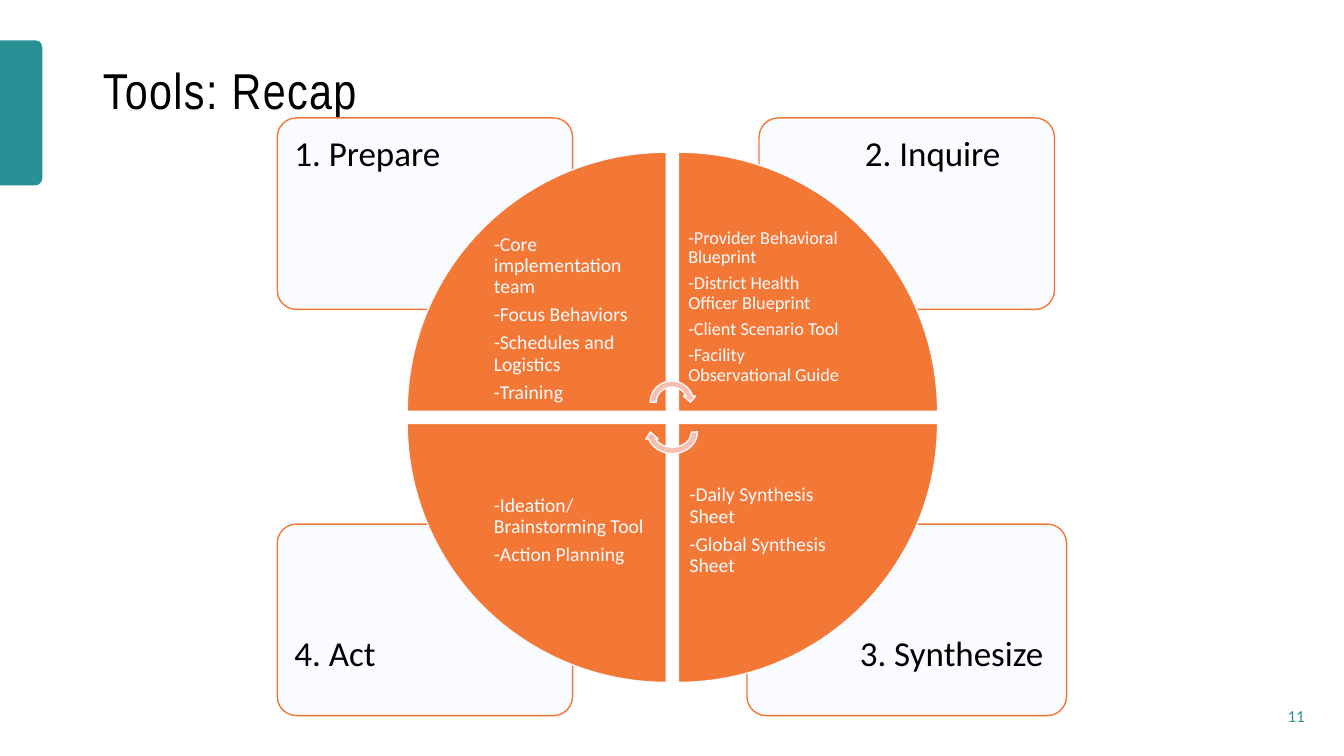
from dataclasses import dataclass
from typing import Any

from lxml import etree
from pptx import Presentation
from pptx import util as u
from pptx.dml.color import RGBColor
from pptx.enum import shapes, text
from pptx.oxml.ns import qn

WIDTH, HEIGHT = u.Inches(13.33), u.Inches(7.5)
COLORS = {"teal": "289195", "orange": "F37836", "pale": "FAFBFF",
          "pink": "F8BEAE", "black": "000000"}
KIND = shapes.MSO_SHAPE
ANCHOR = text.MSO_ANCHOR


@dataclass(frozen=True)
class Box:
    """Left, top, width and height in percent of the slide's size."""
    left: float
    top: float
    width: float
    height: float

    def frame(self) -> dict[str, int]:
        return {"left": round(WIDTH * self.left / 100),
                "top": round(HEIGHT * self.top / 100),
                "width": round(WIDTH * self.width / 100),
                "height": round(HEIGHT * self.height / 100)}


@dataclass(frozen=True)
class Step:
    heading: str
    card: Box
    label: Box
    column: int
    row: int
    rotation: int
    tools: list[str]
    tools_top: float
    size: int = 14


@dataclass(frozen=True)
class Arrow:
    box: Box
    rotation: int


STEPS = [
    Step("3. Synthesize", Box(55.58, 69.33, 23.78, 25.33), Box(63, 82.4, 16.05, 11.73),
         1, 1, 180, ["-Daily Synthesis Sheet", "-Global Synthesis Sheet"], 58.13),
    Step("4. Act", Box(20.63, 69.33, 21.98, 25.33), Box(20.93, 82.4, 14.78, 11.73),
         0, 1, 270, ["-Ideation/ Brainstorming Tool", "-Action Planning"], 58.13),
    Step("2. Inquire", Box(56.48, 15.6, 21.98, 25.33), Box(63.38, 16.27, 14.78, 11.73),
         1, 0, 90, ["-Provider Behavioral Blueprint", "-District Health Officer Blueprint",
                    "-Client Scenario Tool", "-Facility\vObservational Guide"], 28.53, 13),
    Step("1. Prepare", Box(20.63, 15.6, 21.98, 25.33), Box(20.93, 16.27, 14.78, 11.73),
         0, 0, 0, ["-Core implementation team", "-Focus Behaviors",
                   "-Schedules and Logistics", "-Training"], 30.13),
]
ARROWS = [Arrow(Box(48.15, 50, 3.68, 6.4), 0), Arrow(Box(47.93, 53.87, 4.2, 6.53), 180)]


def set_all(target: Any, values: dict[str, Any]) -> None:
    for name, value in values.items():
        setattr(target, name, value)


def rgb(color: str) -> RGBColor:
    return RGBColor.from_string(COLORS[color])


def add_shape(slide: Any, kind: Any, box: Box, fill: str, line: str | None = None,
              rotation: int = 0) -> Any:
    shape = slide.shapes.add_shape(kind, **box.frame())
    shape.rotation = rotation
    shape.shadow.inherit = False
    shape.fill.solid()
    shape.fill.fore_color.rgb = rgb(fill)
    if line:
        shape.line.color.rgb = rgb(line)
        shape.line.width = u.Pt(1)
    else:
        shape.line.fill.background()
    return shape


def write(shape: Any, lines: list[str], size: int, color: str, font: str = "Calibri",
          anchor: Any = ANCHOR.MIDDLE, align: Any = text.PP_ALIGN.LEFT,
          inset: float = 0.1, spacing: float = 0.9, after: float = 0) -> None:
    frame = shape.text_frame
    margin = u.Inches(inset)
    set_all(frame, {"word_wrap": True, "auto_size": text.MSO_AUTO_SIZE.NONE,
                    "vertical_anchor": anchor,
                    "margin_left": margin, "margin_right": margin,
                    "margin_top": margin, "margin_bottom": margin})
    frame.text = "\n".join(lines)
    for paragraph in frame.paragraphs:
        set_all(paragraph, {"alignment": align, "line_spacing": spacing,
                            "space_after": u.Pt(after)})
        for run in paragraph.runs:
            set_all(run.font, {"name": font, "size": u.Pt(size)})
            run.font.color.rgb = rgb(color)


def add_text(slide: Any, box: Box, lines: list[str], size: int, color: str,
             **options: Any) -> None:
    write(slide.shapes.add_textbox(**box.frame()), lines, size, color, **options)


def add_card(slide: Any, step: Step) -> None:
    card = add_shape(slide, KIND.ROUNDED_RECTANGLE, step.card, "pale", "orange")
    card.adjustments[0] = 0.1
    fill_color = card.fill._xPr.find(qn("a:solidFill"))[0]
    etree.SubElement(fill_color, qn("a:alpha"), val="90000")
    add_text(slide, step.label, [step.heading], 25, "black",
             anchor=ANCHOR.TOP, inset=0.13)


def add_wedge(slide: Any, step: Step) -> None:
    box = Box(30.3 + 20.18 * step.column, 20.13 + 35.87 * step.row, 19.28, 34.27)
    add_shape(slide, KIND.PIE_WEDGE, box, "orange", "pale", step.rotation)
    tools_box = Box(35.93 + 14.55 * step.column, step.tools_top, 13.58, 24.13)
    add_text(slide, tools_box, step.tools, step.size, "pale",
             inset=0.11 if step.size == 14 else 0.1, after=0.35 * step.size)


def main() -> None:
    presentation = Presentation()
    set_all(presentation, {"slide_width": WIDTH, "slide_height": HEIGHT})
    slide = presentation.slides.add_slide(presentation.slide_layouts[5])

    # Side tab, title and slide number
    add_shape(slide, KIND.ROUND_2_SAME_RECTANGLE, Box(-3.83, 12.13, 10.8, 5.6),
              "teal", rotation=90)
    title = slide.shapes.title
    set_all(title, Box(6.9, 2.67, 86.25, 19.33).frame())
    write(title, ["Tools: Recap"], 36, "black", font="Arial Narrow")
    title.text_frame.paragraphs[0].runs[0].font._element.set("spc", "100")
    add_text(slide, Box(92.03, 92, 5.78, 5.33), ["11"], 12, "teal",
             align=text.PP_ALIGN.RIGHT, spacing=1.0)

    # Corner cards behind the wheel
    for step in STEPS:
        add_card(slide, step)

    # Wheel of four wedges
    for step in reversed(STEPS):
        add_wedge(slide, step)

    # Rotation arrows at the hub
    for arrow in ARROWS:
        add_shape(slide, KIND.CIRCULAR_ARROW, arrow.box, "pink", "pale", arrow.rotation)

    presentation.save("out.pptx")


if __name__ == "__main__":
    main()
